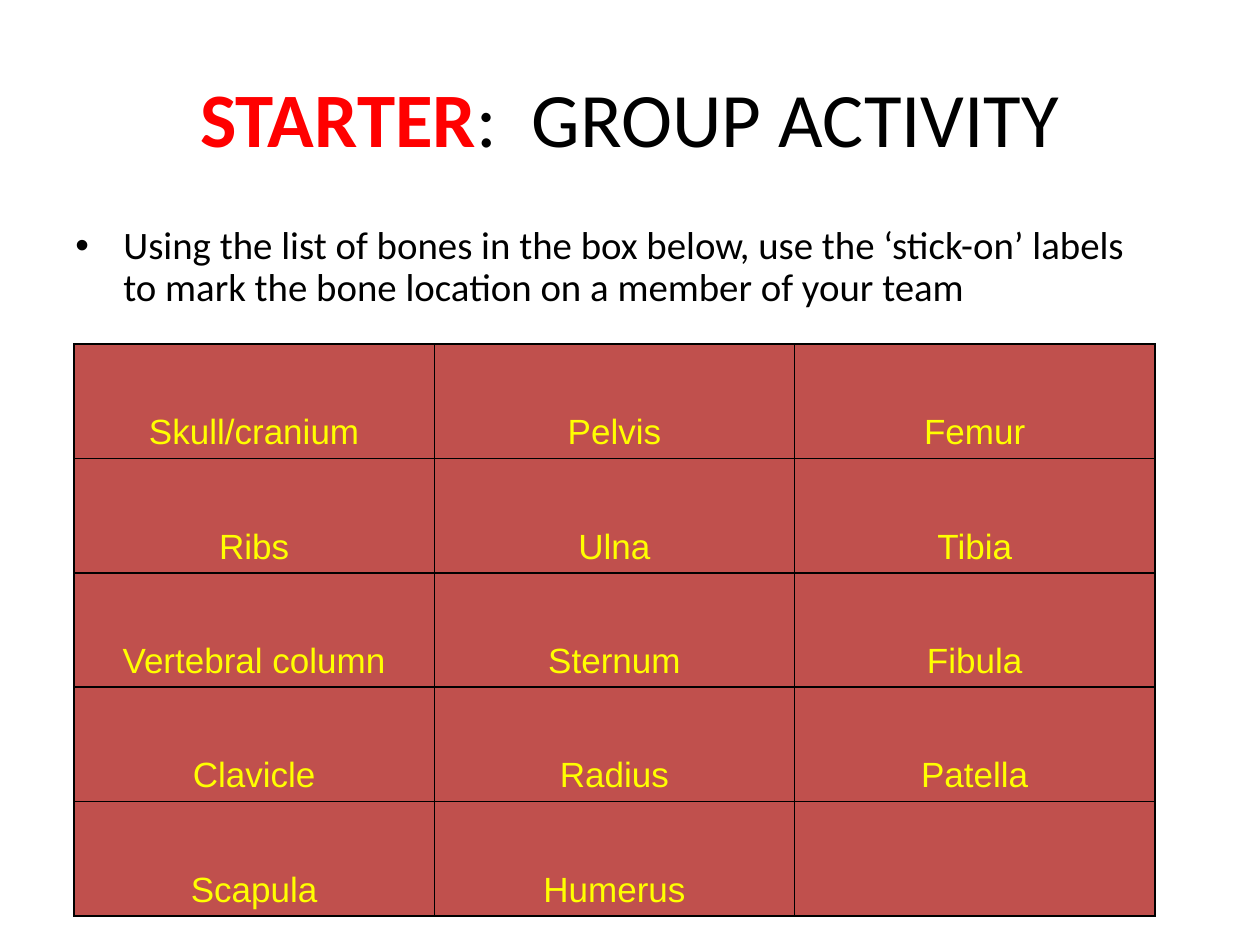
from dataclasses import dataclass

from lxml.etree import SubElement
from pptx import Presentation
from pptx.dml.color import RGBColor
from pptx.enum.text import MSO_ANCHOR, PP_ALIGN
from pptx.oxml.ns import qn
from pptx.util import Emu, Pt


@dataclass(frozen=True)
class Theme:
    heading_font: str = "Calibri"
    table_font: str = "Arial"
    title_size: float = 44
    body_size: float = 22.2
    bone_size: float = 20
    ink: str = "000000"
    accent: str = "FF0000"
    cell: str = "C0504D"
    bone: str = "FFFF00"


THEME = Theme()
HANGING = 48


def px(length):
    return Emu(round(length * 914400 / 126))


def add_run(paragraph, text, color, **font_format):
    run = paragraph.add_run()
    run.text = text
    run.font.color.rgb = RGBColor.from_string(color)
    for name, value in font_format.items():
        setattr(run.font, name, value)


deck = Presentation()
deck.slide_width, deck.slide_height = px(1260), px(945)
slide = deck.slides.add_slide(deck.slide_layouts[5])

# Title
title = slide.shapes.title
title_place = {"left": 63, "top": 38, "width": 1134, "height": 157}
for name, value in title_place.items():
    setattr(title, name, px(value))
title.text_frame.vertical_anchor = MSO_ANCHOR.MIDDLE
heading = title.text_frame.paragraphs[0]
heading.alignment = PP_ALIGN.CENTER
for words, color, bold in (
    ("STARTER", THEME.accent, True),
    (":  GROUP ACTIVITY", THEME.ink, False),
):
    add_run(heading, words, color, name=THEME.heading_font,
            size=Pt(THEME.title_size), bold=bold)

# Bulleted instruction
instruction = slide.shapes.add_textbox(px(63), px(220), px(1084), px(103))
instruction.text_frame.word_wrap = True
task = instruction.text_frame.paragraphs[0]
task.line_spacing = 0.9
task.space_before = Pt(4.4)
task_format = task._p.get_or_add_pPr()
task_format.set("marL", str(px(HANGING)))
task_format.set("indent", str(-px(HANGING)))
SubElement(task_format, qn("a:buFont"), typeface=THEME.table_font)
SubElement(task_format, qn("a:buChar"), char="•")
add_run(
    task,
    "Using the list of bones in the box below, use the ‘stick-on’ labels "
    "to mark the bone location on a member of your team",
    THEME.ink, name=THEME.heading_font, size=Pt(THEME.body_size),
)

# Table of bones
BONES = [
    ("Skull/cranium", "Pelvis", "Femur"),
    ("Ribs", "Ulna", "Tibia"),
    ("Vertebral column", "Sternum", "Fibula"),
    ("Clavicle", "Radius", "Patella"),
    ("Scapula", "Humerus", ""),
]
bone_table = slide.shapes.add_table(
    len(BONES), len(BONES[0]), px(74), px(344), px(1081), px(572)
).table

for row, bones in enumerate(BONES):
    for column, bone in enumerate(bones):
        cell = bone_table.cell(row, column)
        cell.vertical_anchor = MSO_ANCHOR.BOTTOM

        # Borders come before the fill in the cell properties
        cell_format = cell._tc.get_or_add_tcPr()
        for side in ("a:lnL", "a:lnR", "a:lnT", "a:lnB"):
            border = SubElement(cell_format, qn(side), w=str(Pt(1)))
            border_fill = SubElement(border, qn("a:solidFill"))
            SubElement(border_fill, qn("a:srgbClr"), val=THEME.ink)
        cell.fill.solid()
        cell.fill.fore_color.rgb = RGBColor.from_string(THEME.cell)

        if bone:
            label = cell.text_frame.paragraphs[0]
            label.alignment = PP_ALIGN.CENTER
            label_format = label._p.get_or_add_pPr()
            label_format.set("marL", str(px(HANGING)))
            label_format.set("indent", str(-px(HANGING)))
            add_run(label, bone, THEME.bone, name=THEME.table_font,
                    size=Pt(THEME.bone_size), bold=False)

deck.save("out.pptx")
